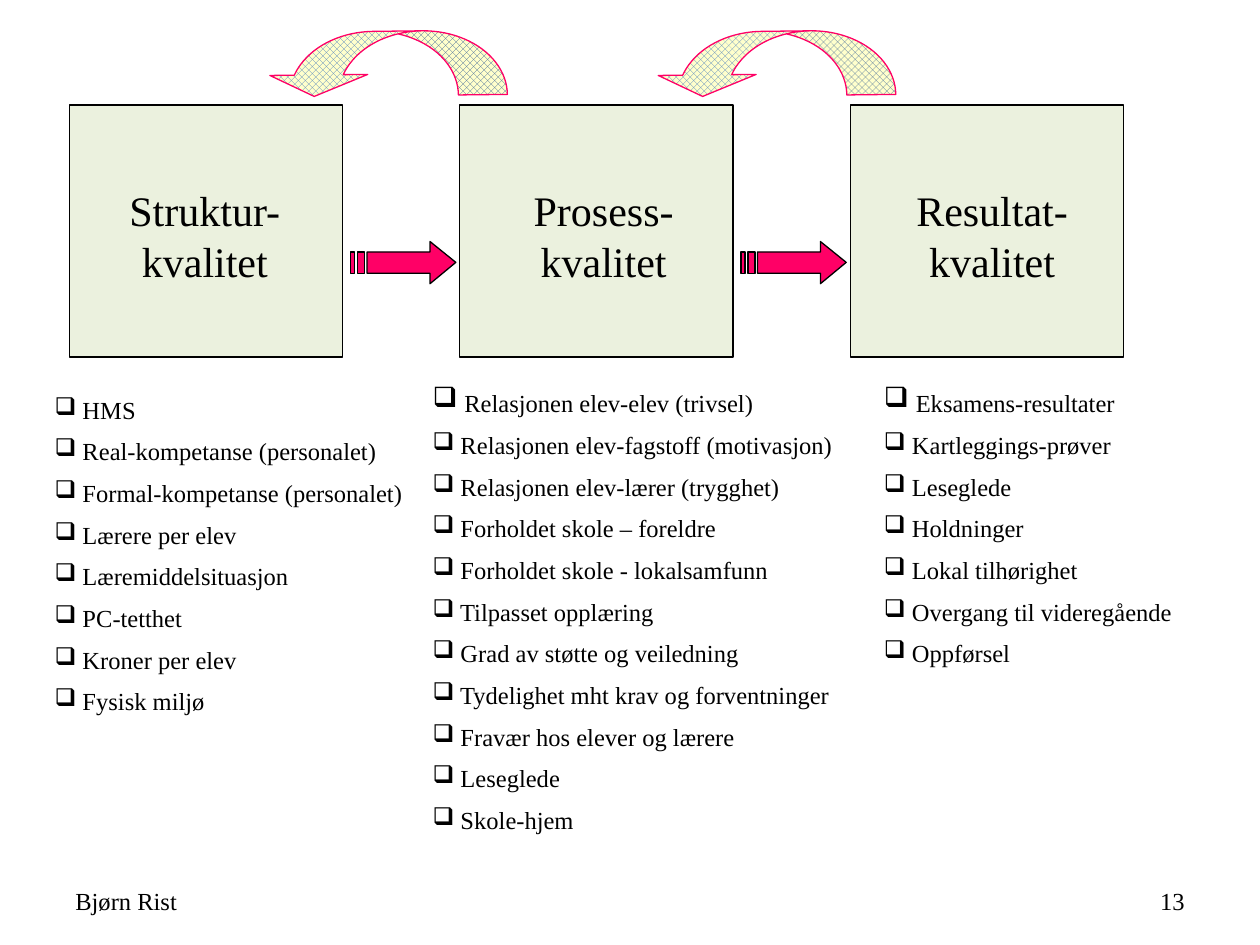
import dataclasses
import typing

import lxml.etree
import pptx
import pptx.dml.color
import pptx.enum.dml
import pptx.enum.shapes
import pptx.enum.text
import pptx.oxml.ns
import pptx.util

Cm = pptx.util.Cm
Pt = pptx.util.Pt
Align = pptx.enum.text.PP_ALIGN
Anchor = pptx.enum.text.MSO_ANCHOR
Preset = pptx.enum.shapes.MSO_SHAPE


@dataclasses.dataclass(frozen=True)
class Theme:
    """Colours, font and type sizes of the slide."""

    font: str = "Times New Roman"
    text: str = "000000"
    box: str = "EBF1DE"
    accent: str = "FF0066"
    pattern_front: str = "4F81BD"
    pattern_back: str = "FFFFCC"
    heading_size: int = 24
    lead_size: int = 16
    body_size: int = 14
    line_width: float = 0.75


@dataclasses.dataclass(frozen=True)
class Area:
    """A rectangle in centimetres."""

    left: float
    top: float
    width: float
    height: float

    def lengths(self) -> tuple[pptx.util.Length, ...]:
        """Return the rectangle as lengths."""
        return tuple(Cm(value) for value in dataclasses.astuple(self))


@dataclasses.dataclass(frozen=True)
class Quality:
    """A quality box with its heading and list of features."""

    heading: str
    heading_left: float
    list_area: Area
    large_first_bullet: bool
    features: tuple[str, ...]


THEME = Theme()
FIRST_LEFT, COLUMN_STEP = 1.4, 7.87
QUALITIES = (
    Quality("Struktur-kvalitet", 2.12, Area(0.85, 7.83, 7.62, 9.7), False, (
        "HMS", "Real-kompetanse (personalet)", "Formal-kompetanse (personalet)",
        "Lærere per elev", "Læremiddelsituasjon", "PC-tetthet",
        "Kroner per elev", "Fysisk miljø")),
    Quality("Prosess-kvalitet", 10.16, Area(8.47, 7.62, 9.1, 9.8), True, (
        "Relasjonen elev-elev (trivsel)", "Relasjonen elev-fagstoff (motivasjon)",
        "Relasjonen elev-lærer (trygghet)", "Forholdet skole – foreldre",
        "Forholdet skole - lokalsamfunn", "Tilpasset opplæring",
        "Grad av støtte og veiledning", "Tydelighet mht krav og forventninger",
        "Fravær hos elever og lærere", "Leseglede", "Skole-hjem")),
    Quality("Resultat-kvalitet", 17.99, Area(17.57, 7.62, 6.77, 6.25), True, (
        "Eksamens-resultater", "Kartleggings-prøver", "Leseglede", "Holdninger",
        "Lokal tilhørighet", "Overgang til videregående", "Oppførsel")),
)
ARROW_HEAD = ((160, 0), (160, 21), (33, 21), (33, 64), (160, 64), (160, 85), (212, 42))
ARROW_BARS = ((14, 28), (0, 8))


def color(code: str) -> pptx.dml.color.RGBColor:
    """Turn a hexadecimal code into a colour."""
    return pptx.dml.color.RGBColor.from_string(code)


def outline(shape: typing.Any, line_color: str) -> None:
    """Give a shape a thin line and no shadow."""
    shape.shadow.inherit = False
    shape.line.color.rgb = color(line_color)
    shape.line.width = Pt(THEME.line_width)


def add_text_frame(slide: typing.Any, area: Area) -> typing.Any:
    """Add a wrapping text box and return its frame."""
    frame = slide.shapes.add_textbox(*area.lengths()).text_frame
    frame.word_wrap = True
    return frame


def style(paragraph: typing.Any, size: int, alignment: typing.Any = Align.LEFT) -> None:
    """Set the font and alignment of a paragraph."""
    paragraph.alignment = alignment
    paragraph.font.name = THEME.font
    paragraph.font.size = Pt(size)
    paragraph.font.color.rgb = color(THEME.text)


def space_by_half(paragraph: typing.Any, bullet: str = "") -> None:
    """Put half a line before a paragraph, with an optional bullet."""
    qualified = pptx.oxml.ns.qn
    properties = paragraph._p.get_or_add_pPr()
    space = lxml.etree.SubElement(properties, qualified("a:spcBef"))
    lxml.etree.SubElement(space, qualified("a:spcPct"), val="50000")
    if bullet:
        lxml.etree.SubElement(properties, qualified("a:buChar"), char=bullet)


def add_footer(slide: typing.Any, left: float, text: str, alignment: typing.Any) -> None:
    """Add one footer text."""
    frame = add_text_frame(slide, Area(left, 17.65, 5.92, 1.02))
    frame.vertical_anchor = Anchor.MIDDLE
    frame.text = text
    style(frame.paragraphs[0], THEME.body_size, alignment)


def add_quality_box(slide: typing.Any, left: float, quality: Quality) -> None:
    """Add a box with its heading."""
    box = slide.shapes.add_shape(
        Preset.ACTION_BUTTON_CUSTOM, *Area(left, 2.12, 5.51, 5.08).lengths())
    box.fill.solid()
    box.fill.fore_color.rgb = color(THEME.box)
    outline(box, THEME.text)
    frame = add_text_frame(slide, Area(quality.heading_left, 3.6, 4.02, 2.29))
    frame.auto_size = pptx.enum.text.MSO_AUTO_SIZE.SHAPE_TO_FIT_TEXT
    frame.text = quality.heading
    space_by_half(frame.paragraphs[0])
    style(frame.paragraphs[0], THEME.heading_size, Align.CENTER)


def add_feature_list(slide: typing.Any, quality: Quality) -> None:
    """Add the bulleted features of a quality."""
    frame = add_text_frame(slide, quality.list_area)
    frame.auto_size = pptx.enum.text.MSO_AUTO_SIZE.SHAPE_TO_FIT_TEXT
    for index, feature in enumerate(quality.features):
        paragraph = frame.add_paragraph() if index else frame.paragraphs[0]
        space_by_half(paragraph, "❑")
        style(paragraph, THEME.body_size)
        if index == 0 and quality.large_first_bullet:
            lead = paragraph.add_run()
            lead.text = " "
            lead.font.size = Pt(THEME.lead_size)
            paragraph.add_run().text = feature
        else:
            paragraph.add_run().text = f" {feature}"


def add_striped_arrow(slide: typing.Any, left: float) -> None:
    """Add a forward arrow with two bars at its tail."""
    builder = slide.shapes.build_freeform(*ARROW_HEAD[0], scale=Cm(0.01))
    builder.add_line_segments(ARROW_HEAD[1:], close=True)
    for start, end in ARROW_BARS:
        builder.move_to(start, 21)
        builder.add_line_segments(((start, 64), (end, 64), (end, 21)), close=True)
    arrow = builder.convert_to_shape(Cm(left), Cm(4.87))
    arrow.fill.solid()
    arrow.fill.fore_color.rgb = color(THEME.accent)
    outline(arrow, THEME.text)


def add_return_arrow(slide: typing.Any, left: float) -> None:
    """Add a curved arrow that leads back to the box before."""
    arrow = slide.shapes.add_shape(
        Preset.CURVED_RIGHT_ARROW, *Area(left, -1.16, 1.3, 4.88).lengths())
    arrow.rotation = 89.4
    for index, value in enumerate((0.759, 1.518, 0.333)):
        arrow.adjustments[index] = value
    arrow.fill.patterned()
    arrow.fill.pattern = pptx.enum.dml.MSO_PATTERN.SOLID_DIAMOND
    arrow.fill.fore_color.rgb = color(THEME.pattern_front)
    arrow.fill.back_color.rgb = color(THEME.pattern_back)
    outline(arrow, THEME.accent)


def main() -> None:
    """Build and save the slide."""
    presentation = pptx.Presentation()
    presentation.slide_width, presentation.slide_height = Cm(25.4), Cm(19.05)
    slide = presentation.slides.add_slide(presentation.slide_layouts[6])
    add_footer(slide, 1.27, "Bjørn Rist", Align.LEFT)
    add_footer(slide, 18.21, "13", Align.RIGHT)
    for index, quality in enumerate(QUALITIES):
        add_quality_box(slide, FIRST_LEFT + index * COLUMN_STEP, quality)
        add_feature_list(slide, quality)
    for index in range(len(QUALITIES) - 1):
        add_striped_arrow(slide, 7.07 + index * COLUMN_STEP)
        add_return_arrow(slide, 7.13 + index * 7.83)
    presentation.save("out.pptx")


if __name__ == "__main__":
    main()
